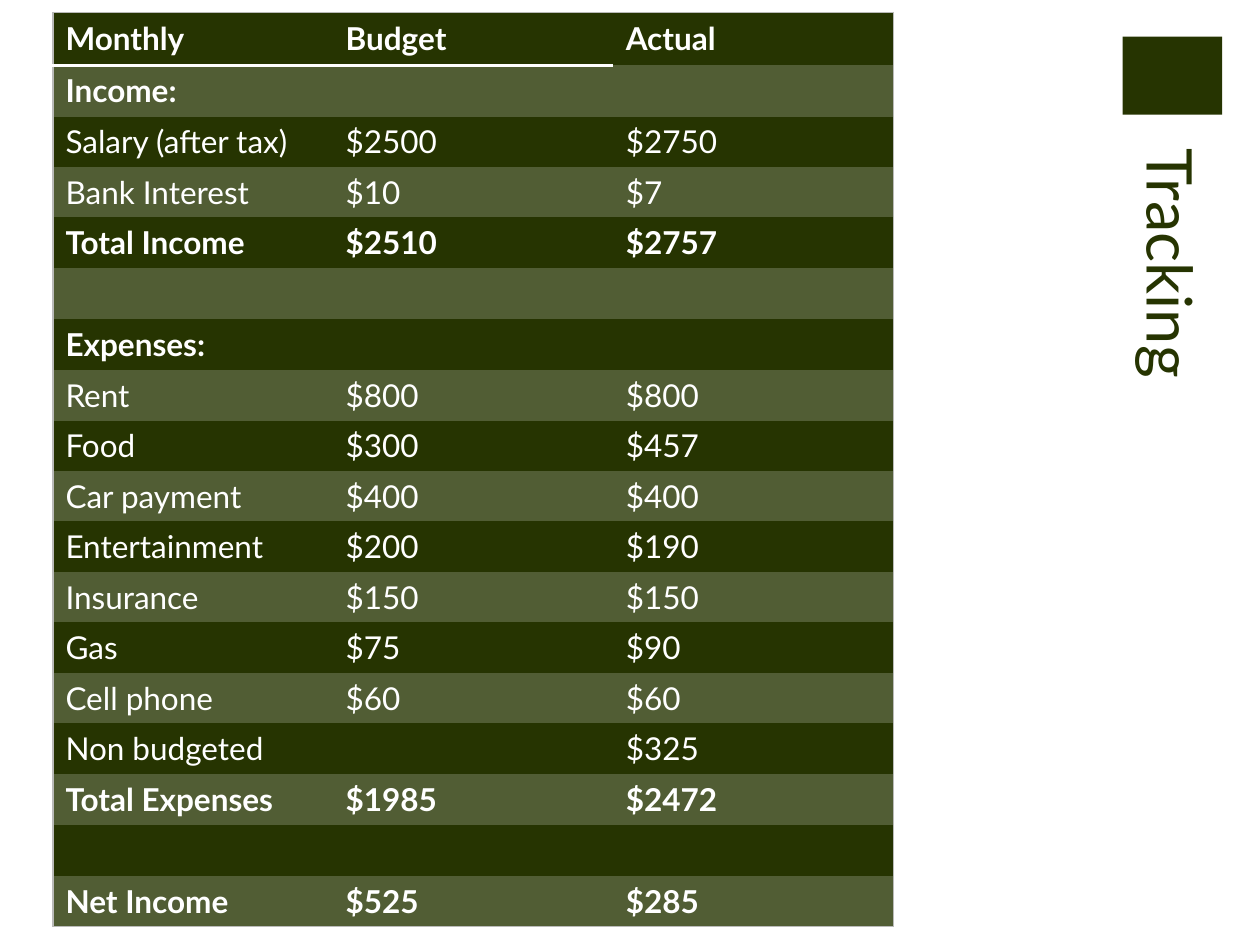
from lxml import etree
from pptx import Presentation
from pptx.dml.color import RGBColor
from pptx.enum.shapes import MSO_SHAPE
from pptx.enum.text import MSO_ANCHOR, MSO_AUTO_SIZE, PP_ALIGN
from pptx.oxml.ns import qn
from pptx.util import Inches, Pt

TITLE = "Tracking"
HEADER = ("Monthly", "Budget", "Actual")
ROWS = [
    ("Income:", "", ""),
    ("Salary (after tax)", "$2500", "$2750"),
    ("Bank Interest", "$10", "$7"),
    ("Total Income", "$2510", "$2757"),
    ("", "", ""),
    ("Expenses:", "", ""),
    ("Rent", "$800", "$800"),
    ("Food", "$300", "$457"),
    ("Car payment", "$400", "$400"),
    ("Entertainment", "$200", "$190"),
    ("Insurance", "$150", "$150"),
    ("Gas", "$75", "$90"),
    ("Cell phone", "$60", "$60"),
    ("Non budgeted", "", "$325"),
    ("Total Expenses", "$1985", "$2472"),
    ("", "", ""),
    ("Net Income", "$525", "$285"),
]
BOLD_ROWS = {"Monthly", "Income:", "Total Income", "Expenses:",
             "Total Expenses", "Net Income"}
COLORS = {"dark": "263401", "band": "515D34", "text": "FFFFFF", "edge": "BABBB9"}
FONT = "Lato"
HEADER_H, ROW_H, TABLE_W = 0.42, 0.4, 6.67


def rgb(name):
    return RGBColor.from_string(COLORS[name])


def style(paragraph, size, color, bold=False):
    for r in paragraph.runs:
        r.font.name, r.font.size, r.font.bold = FONT, Pt(size), bold
        r.font.color.rgb = rgb(color)


def set_borders(cell, borders):
    """Draw the given sides; the other sides get no line."""
    tc_pr = cell._tc.get_or_add_tcPr()
    for i, side in enumerate(("L", "R", "T", "B")):
        color, width = borders.get(side, (None, 0))
        ln = etree.Element(qn(f"a:ln{side}"), w=str(Pt(width)))
        if color:
            fill = etree.SubElement(ln, qn("a:solidFill"))
            etree.SubElement(fill, qn("a:srgbClr"), val=COLORS[color])
        else:
            etree.SubElement(ln, qn("a:noFill"))
        tc_pr.insert(i, ln)


prs = Presentation()
prs.slide_width, prs.slide_height = Inches(10), Inches(7.5)
s = prs.slides.add_slide(prs.slide_layouts[5])

# Corner block
block = s.shapes.add_shape(MSO_SHAPE.RECTANGLE, Inches(8.91), Inches(0.29),
                           Inches(0.79), Inches(0.62))
block.shadow.inherit = False
block.fill.solid()
block.fill.fore_color.rgb = rgb("dark")
block.line.fill.background()

# Vertical title
title = s.shapes.title
title.left, title.top = Inches(8.25), Inches(1.13)
title.width, title.height = Inches(1.45), Inches(2.77)
tf = title.text_frame
tf.text = TITLE
tf.auto_size = MSO_AUTO_SIZE.NONE
tf.vertical_anchor = MSO_ANCHOR.TOP
tf._txBody.bodyPr.set("vert", "eaVert")
tf.paragraphs[0].alignment = PP_ALIGN.LEFT
style(tf.paragraphs[0], 36, "dark")

# Budget table
data = [HEADER] + ROWS
n_rows, n_cols = len(data), len(HEADER)
frame = s.shapes.add_table(n_rows, n_cols, Inches(0.42), Inches(0.1),
                           Inches(TABLE_W), Inches(HEADER_H + ROW_H * len(ROWS)))
table = frame.table
for col in table.columns:
    col.width = Inches(TABLE_W / n_cols)

for i, values in enumerate(data):
    table.rows[i].height = Inches(ROW_H if i else HEADER_H)
    for j, value in enumerate(values):
        cell = table.cell(i, j)
        cell.fill.solid()
        cell.fill.fore_color.rgb = rgb("band" if i % 2 else "dark")
        cell.text = value
        style(cell.text_frame.paragraphs[0], 18, "text", values[0] in BOLD_ROWS)

        # Thin outer edge, white rule under the first two headings
        outer = {"L": j == 0, "R": j == n_cols - 1,
                 "T": i == 0, "B": i == n_rows - 1}
        borders = {side: ("edge", 1) for side, on in outer.items() if on}
        if j < n_cols - 1 and i < 2:
            borders["T" if i else "B"] = ("text", 2.5)
        set_borders(cell, borders)

prs.save("out.pptx")
